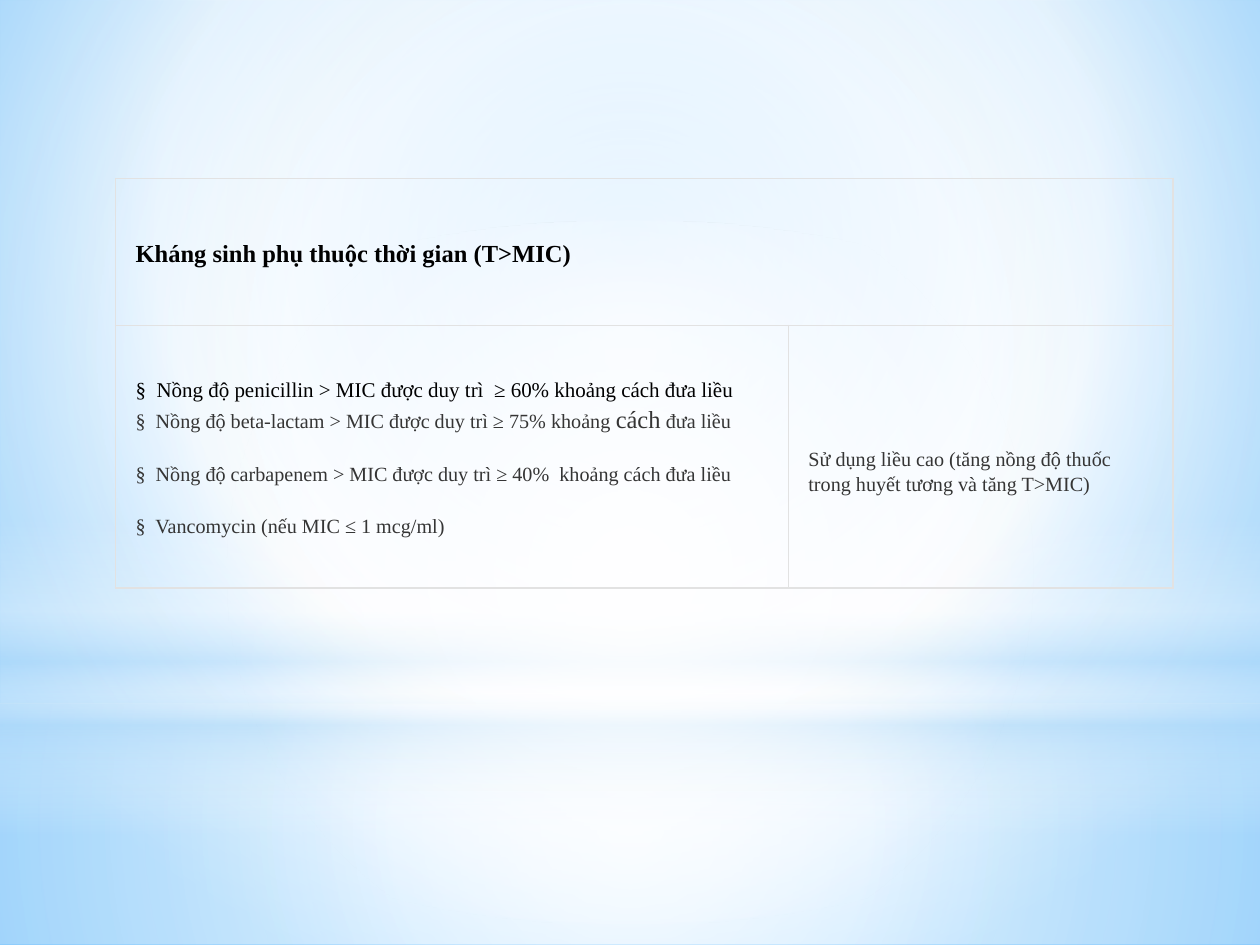
import pptx
import pptx.util
import pptx.dml.color
import pptx.enum.shapes
import pptx.enum.text
from lxml import etree
from pptx.oxml.ns import qn

Pt = pptx.util.Pt
RGB = pptx.dml.color.RGBColor
KIND = pptx.enum.shapes.MSO_SHAPE

# Colours and font
BLACK = RGB(0x00, 0x00, 0x00)
GREY = RGB(0x35, 0x35, 0x35)
RULE = RGB(0xE2, 0xE2, 0xE2)
WHITE = RGB(0xFF, 0xFF, 0xFF)
PALE = RGB(0xB4, 0xDC, 0xFA)
SKY = RGB(0x9E, 0xD5, 0xFF)
DEEP = RGB(0x5B, 0xB9, 0xFF)
FONT = "Times New Roman"

# Gradient stops: position, colour, opacity; focus: left, top, right, bottom
MID = (50, 50, 50, 50)
BACK = [(0, SKY, 100), (60, WHITE, 100), (100, DEEP, 100)]
FOCUS = (20, 10, 20, 60)
# Glows: kind, top, height, stops, focus (None for a vertical sweep)
GLOWS = [
    (KIND.RECTANGLE, 402, 138,
     [(0, WHITE, 91), (37, WHITE, 76), (100, PALE, 79)], MID),
    (KIND.RECTANGLE, 0, 402,
     [(0, WHITE, 89), (48, WHITE, 62), (100, PALE, 79)], MID),
    (KIND.RECTANGLE, 297, 180,
     [(0, WHITE, 0), (29, WHITE, 30), (45, PALE, 40), (55, WHITE, 26),
      (65, PALE, 60), (100, WHITE, 0)], None),
    (KIND.OVAL, 126, 402, [(0, WHITE, 100), (56, WHITE, 0)], MID),
]

# Table text: each line is size, colour, bold, space after, runs (text, own size)
HEAD = [(14, BLACK, True, 0, [("Kháng sinh phụ thuộc thời gian (T>MIC)", None)])]
DRUGS = [
    (12, BLACK, False, 0,
     [("§  Nồng độ penicillin > MIC được duy trì  ≥ 60% khoảng cách đưa liều", None)]),
    (11.5, GREY, False, 15,
     [("§  Nồng độ beta-lactam > MIC được duy trì ≥ 75% khoảng ", None),
      ("cách", 14), (" đưa liều", None)]),
    (11.5, GREY, False, 15,
     [("§  Nồng độ carbapenem > MIC được duy trì ≥ 40%  khoảng cách đưa liều", None)]),
    (11.5, GREY, False, 15, [("§  Vancomycin (nếu MIC ≤ 1 mcg/ml)", None)]),
]
DOSE = [(11.5, GREY, False, 15,
         [("Sử dụng liều cao (tăng nồng độ thuốc trong huyết tương và tăng T>MIC)",
           None)])]
# Cells: row, column, lines, top margin
CELLS = [(0, 0, HEAD, 3.6), (0, 1, [], 3.6), (1, 0, DRUGS, 3.6), (1, 1, DOSE, 19.5)]
COLS = [384.5, 219.75]
ROWS = [84, 150]


def add(node, tag, **attrs):
    return etree.SubElement(node, qn(tag), {k: str(v) for k, v in attrs.items()})


def shade(props, stops, focus):
    """Swap the solid fill in props for a gradient."""
    solid = props.find(qn("a:solidFill"))
    grad = etree.Element(qn("a:gradFill"), rotWithShape="1")
    marks = add(grad, "a:gsLst")
    for pos, tint, alpha in stops:
        stop = add(marks, "a:gs", pos=pos * 1000)
        add(add(stop, "a:srgbClr", val=tint), "a:alpha", val=alpha * 1000)
    if focus:
        sides = {k: v * 1000 for k, v in zip("ltrb", focus)}
        add(add(grad, "a:path", path="circle"), "a:fillToRect", **sides)
    else:
        add(grad, "a:lin", ang=5400000, scaled=0)
    props.replace(solid, grad)


def edge(cell):
    """Draw a thin rule on all four sides of a cell."""
    props = cell._tc.get_or_add_tcPr()
    for side in "LRTB":
        line = add(props, "a:ln" + side, w=Pt(1))
        add(add(line, "a:solidFill"), "a:srgbClr", val=RULE)


def write(cell, lines):
    frame = cell.text_frame
    for i, (size, tint, bold, after, runs) in enumerate(lines):
        para = frame.add_paragraph() if i else frame.paragraphs[0]
        para.line_spacing = 1.15
        para.space_after = Pt(after)
        font = para.font
        font.name, font.size, font.bold = FONT, Pt(size), bold
        font.color.rgb = tint
        for text, own in runs:
            run = para.add_run()
            run.text = text
            run.font.name, run.font.size = FONT, Pt(own or size)
            run.font.bold = bold
            run.font.color.rgb = tint


deck = pptx.Presentation()
deck.slide_width, deck.slide_height = Pt(720), Pt(540)
slide = deck.slides.add_slide(deck.slide_layouts[6])

# Background and glows
slide.background.fill.solid()
shade(slide.element.find(".//" + qn("p:bgPr")), BACK, FOCUS)
for kind, top, height, stops, focus in GLOWS:
    glow = slide.shapes.add_shape(kind, 0, Pt(top), Pt(720), Pt(height))
    glow.shadow.inherit = False
    glow.line.fill.background()
    glow.fill.solid()
    shade(glow.element.spPr, stops, focus)

# Table
table = slide.shapes.add_table(
    len(ROWS), len(COLS), Pt(66), Pt(102), Pt(sum(COLS)), Pt(sum(ROWS))).table
table.first_row = table.horz_banding = False
for col, width in zip(table.columns, COLS):
    col.width = Pt(width)
for row, height in zip(table.rows, ROWS):
    row.height = Pt(height)
table.cell(0, 0).merge(table.cell(0, 1))
for r, c, lines, top in CELLS:
    cell = table.cell(r, c)
    cell.margin_left = cell.margin_right = Pt(11.5)
    cell.margin_top, cell.margin_bottom = Pt(top), Pt(3.6)
    cell.vertical_anchor = pptx.enum.text.MSO_ANCHOR.MIDDLE
    edge(cell)
    cell.fill.background()
    write(cell, lines)

deck.save("out.pptx")
